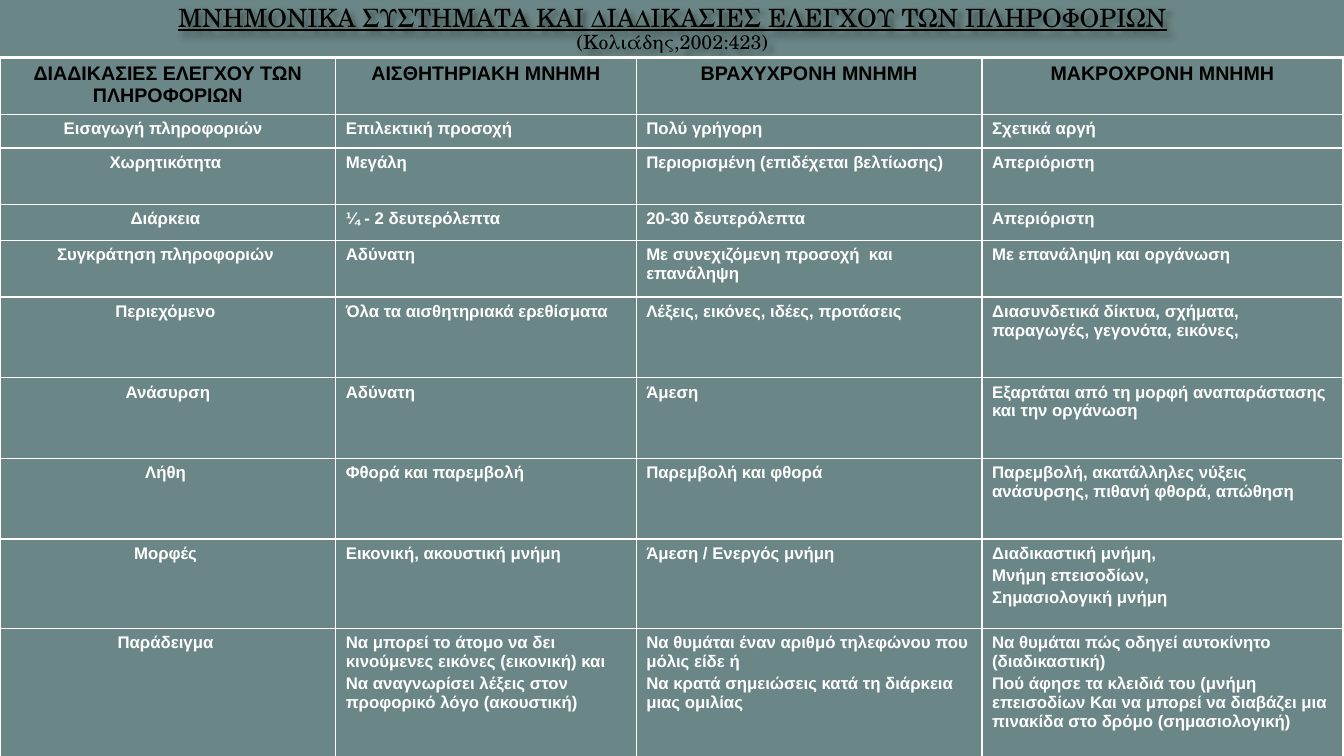
"""Build a slide comparing the three memory systems."""
from typing import NamedTuple

from lxml import etree
from pptx import Presentation
from pptx.dml.color import RGBColor
from pptx.enum.text import MSO_ANCHOR, PP_ALIGN
from pptx.oxml import parse_xml
from pptx.util import Inches, Pt

CENTER, LEFT = PP_ALIGN.CENTER, PP_ALIGN.LEFT
MIDDLE = MSO_ANCHOR.MIDDLE
NS = "http://schemas.openxmlformats.org/drawingml/2006/main"
BLACK, WHITE, TEAL = "000000", "FFFFFF", "6B8686"
THIN, THICK = 1, 2.25
COLUMN_WIDTHS = (3.33, 2.98, 3.43, 3.58)


class MemoryRow(NamedTuple):
    height: float
    process: str
    sensory: str
    short_term: str
    long_term: str


class TextStyle(NamedTuple):
    size: float
    color: str
    font: str = "Arial"
    bold: bool = True
    underline: bool = False


HEADING = TextStyle(14, BLACK)
BODY = TextStyle(12, WHITE)
TITLE = TextStyle(18, BLACK, "TeX Gyre Schola", False, True)
CITATION = TextStyle(14, BLACK, "TeX Gyre Schola", False)

ROWS = (
    MemoryRow(0.56, "ΔΙΑΔΙΚΑΣΙΕΣ ΕΛΕΓΧΟΥ ΤΩΝ ΠΛΗΡΟΦΟΡΙΩΝ", "ΑΙΣΘΗΤΗΡΙΑΚΗ ΜΝΗΜΗ",
              "ΒΡΑΧΥΧΡΟΝΗ ΜΝΗΜΗ", "ΜΑΚΡΟΧΡΟΝΗ ΜΝΗΜΗ"),
    MemoryRow(0.33, "Εισαγωγή πληροφοριών  ", "Επιλεκτική προσοχή", "Πολύ γρήγορη", "Σχετικά αργή"),
    MemoryRow(0.56, "Χωρητικότητα ", "Μεγάλη", "Περιορισμένη (επιδέχεται βελτίωσης)", "Απεριόριστη"),
    MemoryRow(0.36, "Διάρκεια ", "¼ - 2 δευτερόλεπτα", "20-30 δευτερόλεπτα", "Απεριόριστη"),
    MemoryRow(0.56, "Συγκράτηση πληροφοριών ", "Αδύνατη",
              "Με συνεχιζόμενη προσοχή  και επανάληψη", "Με επανάληψη και οργάνωση"),
    MemoryRow(0.8, "Περιεχόμενο ", "Όλα τα αισθητηριακά ερεθίσματα",
              "Λέξεις, εικόνες, ιδέες, προτάσεις",
              "Διασυνδετικά δίκτυα, σχήματα, παραγωγές, γεγονότα, εικόνες,"),
    MemoryRow(0.8, "Ανάσυρση", "Αδύνατη", "Άμεση",
              "Εξαρτάται από τη μορφή αναπαράστασης και την οργάνωση"),
    MemoryRow(0.8, "Λήθη ", "Φθορά και παρεμβολή", "Παρεμβολή και φθορά",
              "Παρεμβολή, ακατάλληλες νύξεις ανάσυρσης, πιθανή φθορά, απώθηση"),
    MemoryRow(0.89, "Μορφές ", "Εικονική, ακουστική μνήμη", "Άμεση / Ενεργός μνήμη",
              "Διαδικαστική μνήμη,\nΜνήμη επεισοδίων,\nΣημασιολογική μνήμη"),
    MemoryRow(1.82, "Παράδειγμα ",
              "Να μπορεί το άτομο να δει κινούμενες εικόνες (εικονική) και\n"
              "Να αναγνωρίσει λέξεις στον προφορικό λόγο (ακουστική)",
              "Να θυμάται έναν αριθμό τηλεφώνου που μόλις είδε ή\n"
              "Να κρατά σημειώσεις κατά τη διάρκεια μιας ομιλίας",
              "Να θυμάται πώς οδηγεί αυτοκίνητο (διαδικαστική)\n"
              "Πού άφησε τα κλειδιά του (μνήμη επεισοδίων Και να μπορεί να διαβάζει "
              "μια πινακίδα στο δρόμο (σημασιολογική)"),
)


def rgb(color: str) -> RGBColor:
    """Turn a hex string into a colour."""
    return RGBColor.from_string(color)


def style_run(run, style: TextStyle) -> None:
    """Apply a text style to one run."""
    run.font.size = Pt(style.size)
    run.font.name = style.font
    run.font.bold = style.bold
    run.font.underline = style.underline
    run.font.color.rgb = rgb(style.color)


def add_border(cell, side: str, width: float) -> None:
    """Draw one white side of a cell."""
    line = etree.SubElement(cell._tc.get_or_add_tcPr(), f"{{{NS}}}ln{side}", w=str(Pt(width)))
    fill = etree.SubElement(line, f"{{{NS}}}solidFill")
    etree.SubElement(fill, f"{{{NS}}}srgbClr", val=WHITE)


def add_title(slide) -> None:
    """Add the shadowed heading with its citation."""
    title = slide.shapes.add_textbox(Inches(1.37), Inches(0.03), Inches(10.6), Inches(0.53))
    frame = title.text_frame
    frame.word_wrap = True
    frame.vertical_anchor = MIDDLE
    frame.text = "ΜΝΗΜΟΝΙΚΑ ΣΥΣΤΗΜΑΤΑ ΚΑΙ ΔΙΑΔΙΚΑΣΙΕΣ ΕΛΕΓΧΟΥ ΤΩΝ ΠΛΗΡΟΦΟΡΙΩΝ\v(Κολιάδης,2002:423)"
    paragraph = frame.paragraphs[0]
    paragraph.alignment = CENTER
    paragraph.line_spacing = 0.9
    for run, style in zip(paragraph.runs, (TITLE, CITATION)):
        style_run(run, style)
    title._element.spPr.append(parse_xml(
        f'<a:effectLst xmlns:a="{NS}"><a:outerShdw blurRad="50800" dist="38100" dir="2700000">'
        f'<a:srgbClr val="{BLACK}"><a:alpha val="40000"/></a:srgbClr>'
        '</a:outerShdw></a:effectLst>'))


def add_memory_table(slide) -> None:
    """Add the table of control processes by memory system."""
    last_row, last_column = len(ROWS) - 1, len(COLUMN_WIDTHS) - 1
    table = slide.shapes.add_table(
        len(ROWS), len(COLUMN_WIDTHS), Inches(0), Inches(0.57), Inches(sum(COLUMN_WIDTHS)),
        Inches(sum(row.height for row in ROWS))).table
    table.first_row = table.horz_banding = False
    for column, width in zip(table.columns, COLUMN_WIDTHS):
        column.width = Inches(width)
    for r, (height, *texts) in enumerate(ROWS):
        table.rows[r].height = Inches(height)
        style = BODY if r else HEADING
        for c, text in enumerate(texts):
            cell = table.cell(r, c)
            cell.text_frame.text = text
            for paragraph in cell.text_frame.paragraphs:
                paragraph.alignment = CENTER if r == 0 or c == 0 else LEFT
                paragraph.space_before = Pt(style.size * 0.2)
                for run in paragraph.runs:
                    style_run(run, style)
            outer_sides = {"L": c == 0, "R": c == last_column, "T": r == 0, "B": r == last_row}
            for side, is_outer in outer_sides.items():
                add_border(cell, side, THICK if is_outer else THIN)
            cell.fill.background()


def main() -> None:
    """Build and save the slide."""
    deck = Presentation()
    deck.slide_width, deck.slide_height = Inches(13.33), Inches(7.5)
    slide = deck.slides.add_slide(deck.slide_layouts[6])
    slide.background.fill.solid()
    slide.background.fill.fore_color.rgb = rgb(TEAL)
    add_title(slide)
    add_memory_table(slide)
    deck.save("out.pptx")


if __name__ == "__main__":
    main()
